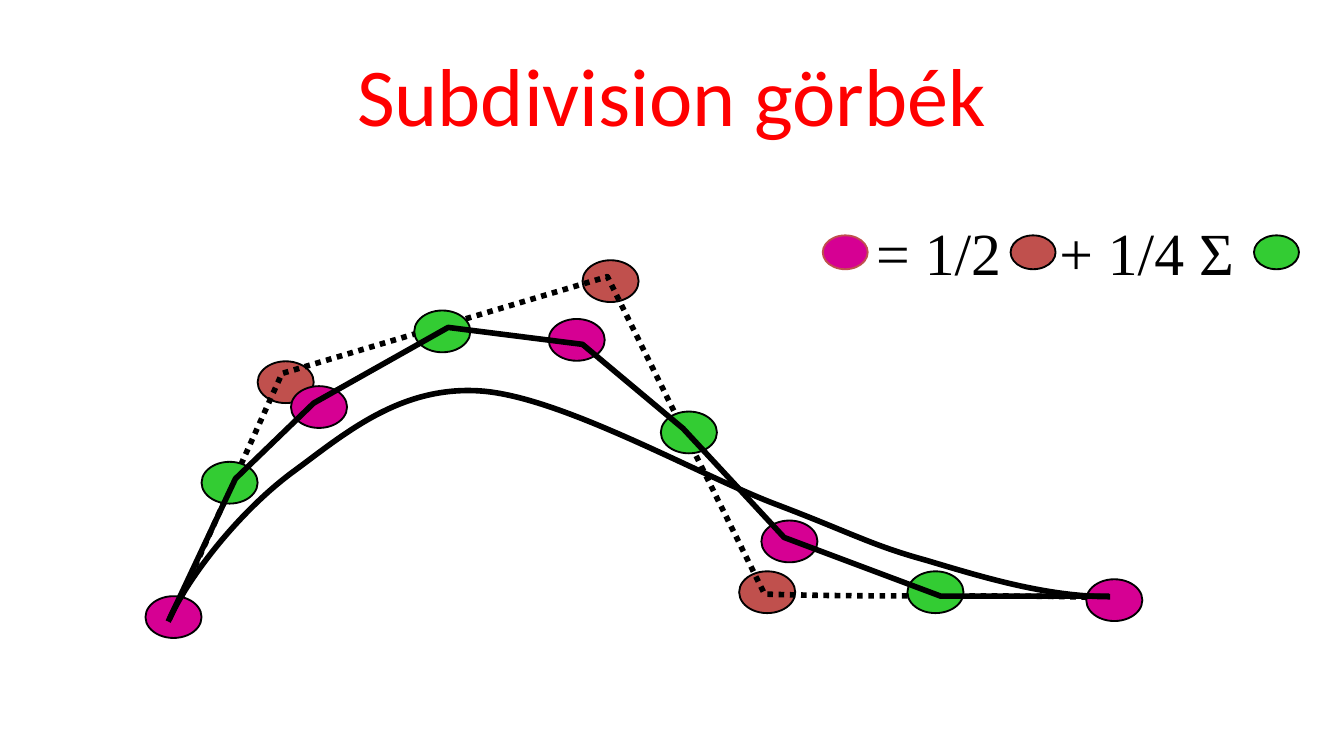
from dataclasses import dataclass

from pptx import Presentation
from pptx.dml.color import RGBColor
from pptx.enum.dml import MSO_LINE
from pptx.enum.shapes import MSO_SHAPE
from pptx.enum.text import MSO_ANCHOR, PP_ALIGN
from pptx.oxml.ns import qn
from pptx.oxml.xmlchemy import OxmlElement
from pptx.util import Cm, Pt


@dataclass(frozen=True)
class Theme:
    title: RGBColor = RGBColor(0xFF, 0x00, 0x00)
    ink: RGBColor = RGBColor(0x00, 0x00, 0x00)
    old: RGBColor = RGBColor(0xC0, 0x50, 0x4D)
    middle: RGBColor = RGBColor(0x33, 0xCC, 0x33)
    new: RGBColor = RGBColor(0xD6, 0x00, 0x93)
    title_size: Pt = Pt(44)
    formula_size: Pt = Pt(32)
    outline: Pt = Pt(1)
    stroke: Pt = Pt(3)


theme = Theme()


def add_dot(shapes, x, y, color, size=(1.06, 0.79), edge=theme.ink):
    sp = shapes.add_shape(MSO_SHAPE.OVAL, Cm(x), Cm(y), Cm(size[0]), Cm(size[1]))
    sp.shadow.inherit = False
    sp.fill.solid()
    sp.fill.fore_color.rgb = color
    sp.line.color.rgb = edge
    sp.line.width = theme.outline


def add_path(shapes, points, straight, dash=None):
    start, *rest = [(Cm(x), Cm(y)) for x, y in points]
    builder = shapes.build_freeform(*start)
    builder.add_line_segments(rest, close=False)
    sp = builder.convert_to_shape()
    sp.shadow.inherit = False
    sp.fill.background()
    sp.line.color.rgb = theme.ink
    sp.line.width = theme.stroke
    if dash:
        sp.line.dash_style = dash
    segments = list(sp._element.iter(qn("a:lnTo")))[straight:]
    for i in range(0, len(segments), 3):
        curve = OxmlElement("a:cubicBezTo")
        segments[i].addprevious(curve)
        for segment in segments[i:i + 3]:
            curve.append(segment[0])
            segment.getparent().remove(segment)


prs = Presentation()
prs.slide_width, prs.slide_height = Cm(25.4), Cm(14.29)
s = prs.slides.add_slide(prs.slide_layouts[5])

title = s.shapes.title
for name, value in dict(left=Cm(1.27), top=Cm(0.58), width=Cm(22.86), height=Cm(2.39)).items():
    setattr(title, name, value)
tf = title.text_frame
tf.text = "Subdivision görbék"
tf.vertical_anchor = MSO_ANCHOR.MIDDLE
p = tf.paragraphs[0]
p.alignment = PP_ALIGN.CENTER
for name, value in dict(name="Calibri", size=theme.title_size).items():
    setattr(p.runs[0].font, name, value)
p.runs[0].font.color.rgb = theme.title

for x, y in [(4.87, 6.83), (11.01, 4.92), (13.97, 10.8)]:
    add_dot(s.shapes, x, y, theme.old)

control_polygon = [(3.25, 11.68), (5.33, 7.06), (11.48, 5.23), (14.45, 11.23),
                   (16.54, 11.3), (18.9, 11.23), (20.98, 11.3)]
add_path(s.shapes, control_polygon, 3, MSO_LINE.ROUND_DOT)

middle_group = s.shapes.add_group_shape()
for x, y in [(3.81, 8.73), (7.83, 5.87), (12.49, 7.78), (17.15, 10.8)]:
    add_dot(middle_group.shapes, x, y, theme.middle)

refined_group = s.shapes.add_group_shape()
for x, y in [(14.39, 9.84), (10.37, 6.03), (5.5, 7.3), (2.75, 11.27), (20.53, 10.95)]:
    add_dot(refined_group.shapes, x, y, theme.new)
refined_polygon = [(3.18, 11.75), (4.45, 9.05), (5.93, 7.62), (8.47, 6.19), (11.01, 6.51),
                   (12.91, 8.1), (14.82, 10.16), (17.78, 11.27), (20.96, 11.27)]
add_path(refined_group.shapes, refined_polygon, len(refined_polygon) - 1)

for x, color, edge in [(19.1, theme.old, theme.ink), (15.55, theme.new, theme.old),
                       (23.7, theme.middle, theme.ink)]:
    add_dot(s.shapes, x, 4.45, color, (0.85, 0.64), edge)

formula = s.shapes.add_textbox(Cm(16.31), Cm(3.96), Cm(7.67), Cm(1.62))
tf = formula.text_frame
tf.word_wrap = True
p = tf.paragraphs[0]
r = p.add_run()
r.text = "= 1/2\t+ 1/4 Σ"
for name, value in dict(name="Times New Roman", size=theme.formula_size).items():
    setattr(r.font, name, value)
r.font.color.rgb = theme.ink
tabs = OxmlElement("a:tabLst")
tab = OxmlElement("a:tab")
tab.set("pos", str(Cm(3.46)))
tab.set("algn", "l")
tabs.append(tab)
p._p.get_or_add_pPr().append(tabs)

limit_curve = [(3.2, 11.71), (3.56, 10.9), (4.52, 9.68), (5.51, 8.94),
               (6.48, 8.23), (7.54, 7.29), (9.07, 7.39),
               (10.62, 7.49), (13.28, 9.02), (14.71, 9.55),
               (16.1, 10.08), (16.48, 10.31), (17.5, 10.59),
               (18.54, 10.9), (19.76, 11.28), (20.98, 11.28)]
add_path(s.shapes, limit_curve, 0)

prs.save("out.pptx")
